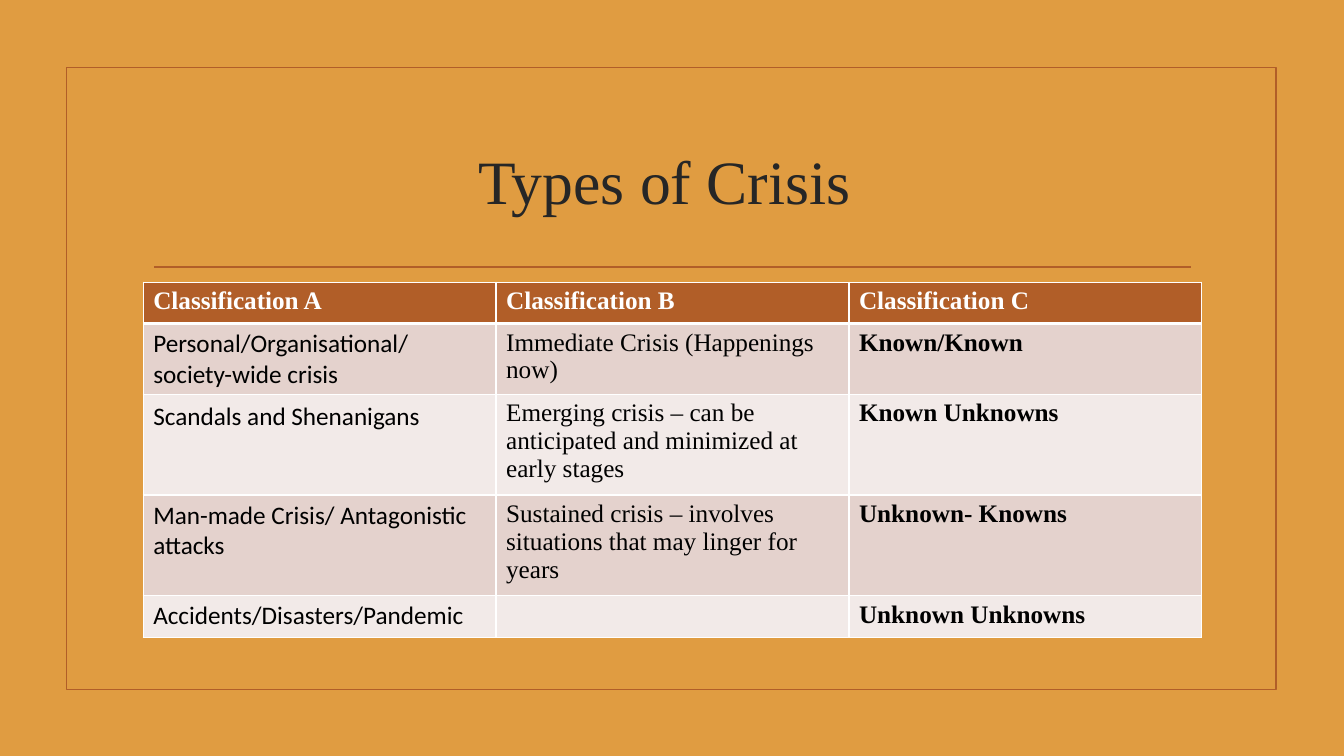
from lxml.etree import SubElement
from pptx import Presentation
from pptx.dml.color import RGBColor
from pptx.enum.shapes import MSO_CONNECTOR, MSO_SHAPE
from pptx.enum.text import MSO_ANCHOR, PP_ALIGN
from pptx.oxml import parse_xml
from pptx.oxml.ns import nsdecls, qn
from pptx.util import Inches, Pt

RUST, WHITE, BLACK = "B15E28", "FFFFFF", "000000"
BANDS = ["E4D2CD", "F2EAE8"]
SERIF, SANS = "Times New Roman", "Calibri"
ROWS = [
    ["Classification A", "Classification B", "Classification C"],
    ["Personal/Organisational/society-wide crisis",
     "Immediate Crisis (Happenings now)", "Known/Known"],
    ["Scandals and Shenanigans",
     "Emerging crisis – can be anticipated and minimized at early stages",
     "Known Unknowns"],
    ["Man-made Crisis/ Antagonistic attacks",
     "Sustained crisis – involves situations that may linger for years",
     "Unknown- Knowns"],
    ["Accidents/Disasters/Pandemic", "", "Unknown Unknowns\u00a0".strip()],
]


def color(code):
    """Turn a hex string into a colour."""
    return RGBColor.from_string(code)


def style(para, name, size, code, bold=False):
    """Set the font of a paragraph."""
    font = para.font
    font.name, font.size, font.bold = name, Pt(size), bold
    font.color.rgb = color(code)


def frame(slide, x, y, w, h):
    """Draw the border and the rule below the title."""
    rect = slide.shapes.add_shape(
        MSO_SHAPE.RECTANGLE, Inches(x), Inches(y), Inches(w), Inches(h))
    rect.shadow.inherit = False
    rect.fill.background()
    rule = slide.shapes.add_connector(
        MSO_CONNECTOR.STRAIGHT, Inches(x + 0.87), Inches(y + 1.98),
        Inches(x + w - 0.85), Inches(y + 1.98))
    SubElement(rule._element.spPr, qn("a:effectLst"))
    for part in (rect, rule):
        part.line.color.rgb = color(RUST)
        part.line.width = Pt(1.25)


def title(slide, x, y, w, h):
    """Write the centred slide title."""
    box = slide.shapes.add_textbox(Inches(x), Inches(y), Inches(w), Inches(h))
    text = box.text_frame
    text.word_wrap = True
    text.vertical_anchor = MSO_ANCHOR.MIDDLE
    para = text.paragraphs[0]
    para.text = "Types of Crisis "
    para.alignment = PP_ALIGN.CENTER
    style(para, SERIF, 44, "262626")


def border(cell, row):
    """Give a cell white edges, thick below the header."""
    props = cell._tc.get_or_add_tcPr()
    for i, side in enumerate("LRTB"):
        thick = (row, side) in ((0, "B"), (1, "T"))
        props.insert(i, parse_xml(
            f'<a:ln{side} {nsdecls("a")} w="{Pt(3 if thick else 1)}">'
            f'<a:solidFill><a:srgbClr val="{WHITE}"/></a:solidFill>'
            f'</a:ln{side}>'))


def grid(slide, x, y, w, row_h):
    """Build the table of crisis types."""
    count, cols = len(ROWS), len(ROWS[0])
    table = slide.shapes.add_table(
        count, cols, Inches(x), Inches(y), Inches(w),
        Inches(row_h * count)).table
    for r, row in enumerate(ROWS):
        for c, words in enumerate(row):
            cell = table.cell(r, c)
            head = r == 0
            cell.fill.solid()
            cell.fill.fore_color.rgb = color(RUST if head else BANDS[(r - 1) % 2])
            border(cell, r)
            para = cell.text_frame.paragraphs[0]
            para.text = words
            style(para, SANS if c == 0 and not head else SERIF, 18,
                  WHITE if head else BLACK, head or c == 2)
    note = table.cell(2, 0).text_frame.paragraphs[0]
    note.line_spacing, note.space_after = 1.07, Pt(8)


def main():
    """Build and save the slide."""
    deck = Presentation()
    deck.slide_width, deck.slide_height = Inches(13.33), Inches(7.5)
    slide = deck.slides.add_slide(deck.slide_layouts[6])
    fill = slide.background.fill
    fill.solid()
    fill.fore_color.rgb = color("E09C41")
    frame(slide, 0.66, 0.67, 12, 6.17)
    title(slide, 1.42, 1.07, 10.5, 1.43)
    grid(slide, 1.42, 2.8, 10.5, 0.41)
    deck.save("out.pptx")


if __name__ == "__main__":
    main()
